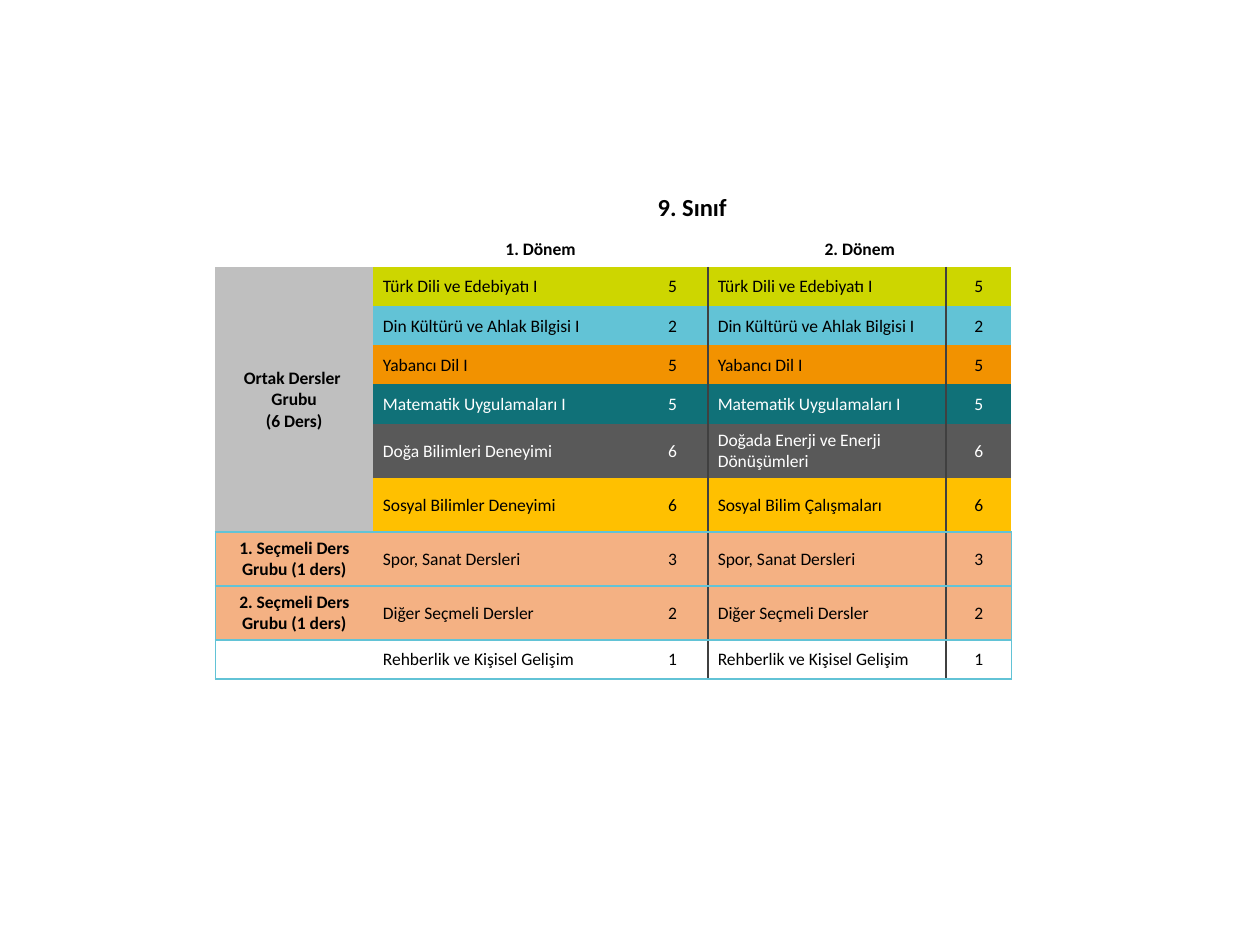
from lxml import etree
from pptx import Presentation, util as u
from pptx.dml.color import RGBColor
from pptx.enum import text
from pptx.oxml.ns import qn

BLACK, WHITE, ACCENT, DIVIDER = "000000", "FFFFFF", "62C3D6", "404040"
GROUP, ELECTIVE = "BFBFBF", "F4B183"
NO_STYLE = "{2D5ABB26-0587-4C30-8999-92F81FD0307C}"
COLUMNS = [3.18, 5.33, 1.42, 4.8, 1.32]
ROWS = [0.99, 0.71] + [0.79] * 4 + [1.09] * 4 + [0.79]
LESSONS = [
    ("Ortak Dersler \nGrubu\v(6 Ders)", "Türk Dili ve Edebiyatı I", None, 5, "CDD600", BLACK),
    ("", "Din Kültürü ve Ahlak Bilgisi I", None, 2, ACCENT, BLACK),
    ("", "Yabancı Dil I", None, 5, "F29200", BLACK),
    ("", "Matematik Uygulamaları I", None, 5, "107178", WHITE),
    ("", "Doğa Bilimleri Deneyimi", "Doğada Enerji ve Enerji Dönüşümleri", 6, "595959", WHITE),
    ("", "Sosyal Bilimler Deneyimi", "Sosyal Bilim Çalışmaları", 6, "FFC000", BLACK),
    ("1. Seçmeli Ders Grubu (1 ders)", "Spor, Sanat Dersleri", None, 3, ELECTIVE, BLACK),
    ("2. Seçmeli Ders Grubu (1 ders)", "Diğer Seçmeli Dersler", None, 2, ELECTIVE, BLACK),
    ("", "Rehberlik ve Kişisel Gelişim", None, 1, WHITE, BLACK),
]
FIRST_LESSON, LAST_COMMON, FIRST_ELECTIVE = 2, 7, 8


def color(value):
    return RGBColor.from_string(value)


class TimetableSlide:
    """Holds the text style and the slide that receives the timetable."""

    def __init__(self, presentation):
        self.slide = presentation.slides.add_slide(presentation.slide_layouts[6])
        self.style = {"name": "Calibri", "size": u.Pt(10), "bold": False}

    def table(self, left, top, columns, rows):
        shape = self.slide.shapes.add_table(
            len(rows), len(columns), u.Cm(left), u.Cm(top), u.Cm(sum(columns)), u.Cm(sum(rows))
        )
        table = shape.table
        table.first_row = table.horz_banding = False
        table._tbl.tblPr.find(qn("a:tableStyleId")).text = NO_STYLE
        for column, width in zip(table.columns, columns):
            column.width = u.Cm(width)
        for row, height in zip(table.rows, rows):
            row.height = u.Cm(height)
        for cell in table.iter_cells():
            self.cell(cell, "")
        return table

    def cell(self, cell, words, ink=BLACK, left=0.02, right=0.02, centered=True, **changes):
        layout = {
            "margin_left": u.Cm(left),
            "margin_right": u.Cm(right),
            "margin_top": u.Cm(0.02),
            "margin_bottom": 0,
            "vertical_anchor": text.MSO_ANCHOR.MIDDLE,
        }
        for name, value in layout.items():
            setattr(cell, name, value)
        cell.text = words
        style = {**self.style, **changes}
        size = str(int(style["size"].pt * 100))
        for paragraph in cell.text_frame.paragraphs:
            paragraph.alignment = text.PP_ALIGN.CENTER if centered else text.PP_ALIGN.LEFT
            for run in paragraph.runs:
                for name, value in style.items():
                    setattr(run.font, name, value)
                run.font.color.rgb = color(ink)
            for line_break in paragraph._p.findall(qn("a:br")):
                etree.SubElement(line_break, qn("a:rPr"), sz=size)
            if not paragraph.runs:
                for old in paragraph._p.findall(qn("a:endParaRPr")):
                    paragraph._p.remove(old)
                etree.SubElement(paragraph._p, qn("a:endParaRPr"), sz=size)

    def borders(self, cell, sides):
        properties = cell._tc.get_or_add_tcPr()
        for side in "LRTB":
            if side in sides:
                line = etree.SubElement(properties, qn(f"a:ln{side}"), w=str(u.Pt(1)))
                fill = etree.SubElement(line, qn("a:solidFill"))
                etree.SubElement(fill, qn("a:srgbClr"), val=sides[side])

    def fill(self, cell, value):
        cell.fill.solid()
        cell.fill.fore_color.rgb = color(value)


def border_sides(row, column):
    sides = {}
    if row >= FIRST_ELECTIVE:
        sides["T"] = ACCENT
        sides.update({0: {"L": ACCENT}, 4: {"R": ACCENT}}.get(column, {}))
    if row >= LAST_COMMON or column == 0:
        sides["B"] = ACCENT
    sides.update({2: {"R": DIVIDER}, 3: {"L": DIVIDER}}.get(column, {}))
    return sides


def main():
    presentation = Presentation()
    presentation.slide_width, presentation.slide_height = u.Cm(25.4), u.Cm(19.05)
    timetable = TimetableSlide(presentation)
    table = timetable.table(4.34, 3.68, COLUMNS, ROWS)
    for start, end in [((0, 1), (0, 4)), ((1, 1), (1, 2)), ((1, 3), (1, 4)),
                       ((FIRST_LESSON, 0), (LAST_COMMON, 0))]:
        table.cell(*start).merge(table.cell(*end))

    timetable.cell(table.cell(0, 1), "9. Sınıf", size=u.Pt(14), bold=True)
    for column, term in ((1, "1. Dönem"), (3, "2. Dönem")):
        timetable.cell(table.cell(1, column), term, bold=True)

    for row, (group, first, second, hours, shade, ink) in enumerate(LESSONS, FIRST_LESSON):
        for column, words in enumerate([group, first, str(hours), second or first, str(hours)]):
            cell = table.cell(row, column)
            if cell.is_spanned:
                continue
            if column in (1, 3):
                right = 0.1 if column == 3 else 0.02
                timetable.cell(cell, words, ink, left=0.2, right=right, centered=False)
            else:
                timetable.cell(cell, words, ink, bold=column == 0)
            timetable.borders(cell, border_sides(row, column))
            if column or group:
                timetable.fill(cell, GROUP if cell.is_merge_origin else shade)

    presentation.save("out.pptx")


if __name__ == "__main__":
    main()
